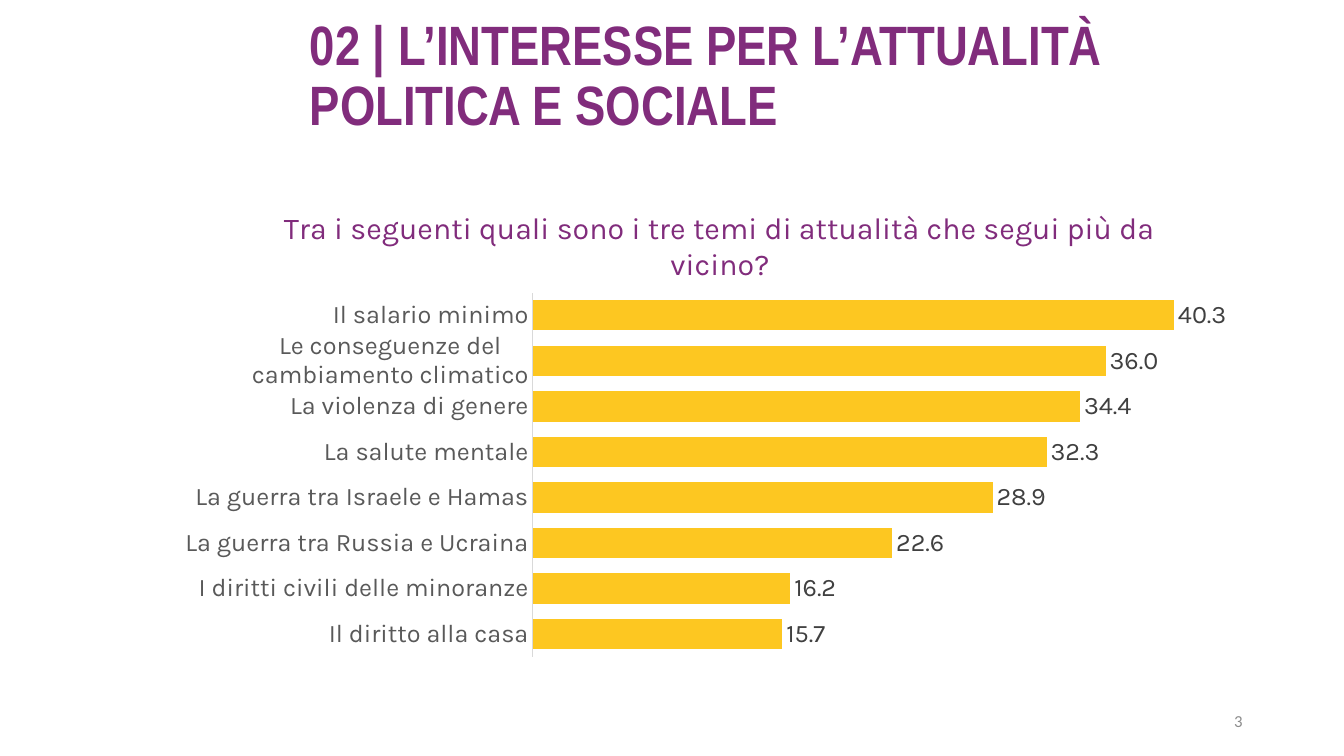
from lxml.etree import SubElement
from pptx import Presentation
from pptx.chart.data import CategoryChartData
from pptx.dml.color import RGBColor
from pptx.enum.chart import XL_CHART_TYPE, XL_LABEL_POSITION, XL_TICK_MARK
from pptx.enum.text import MSO_ANCHOR, MSO_AUTO_SIZE, PP_ALIGN
from pptx.oxml.ns import qn
from pptx.util import Inches, Pt

WIDTH, HEIGHT = Inches(13.33), Inches(7.5)
PURPLE = RGBColor(0x81, 0x2C, 0x7C)
YELLOW = RGBColor(0xFD, 0xC7, 0x21)
LABEL_GREY = RGBColor(0x40, 0x40, 0x40)
AXIS_GREY = RGBColor(0x59, 0x59, 0x59)
LINE_GREY = RGBColor(0xD9, 0xD9, 0xD9)
NUMBER_GREY = RGBColor(0x8C, 0x8C, 0x8C)
BLACK = RGBColor(0, 0, 0)

QUESTION = "Tra i seguenti quali sono i tre temi di attualità che segui più da vicino?"
TOPICS = {
    "Il diritto alla casa": 15.7,
    "I diritti civili delle minoranze": 16.2,
    "La guerra tra Russia e Ucraina": 22.6,
    "La guerra tra Israele e Hamas": 28.9,
    "La salute mentale": 32.3,
    "La violenza di genere": 34.4,
    "Le conseguenze del cambiamento climatico": 36.0,
    "Il salario minimo": 40.3,
}


def format_font(font, color, **values):
    font.color.rgb = color
    for name, value in values.items():
        setattr(font, name, value)


def area(left, top, width, height):
    """Turn shares of the slide into lengths."""
    return (int(WIDTH * left), int(HEIGHT * top),
            int(WIDTH * width), int(HEIGHT * height))


def write_text(box, text, alignment, color, **values):
    frame = box.text_frame
    frame.word_wrap = True
    frame.auto_size = MSO_AUTO_SIZE.NONE
    frame.vertical_anchor = MSO_ANCHOR.MIDDLE
    para = frame.paragraphs[0]
    para.alignment = alignment
    span = para.add_run()
    span.text = text
    format_font(span.font, color, **values)
    return para


def place(parent, **shares):
    """Set a manual layout, in shares of the chart, on a chart part."""
    for old in parent.findall(qn("c:layout")):
        parent.remove(old)
    layout = SubElement(parent, qn("c:layout"))
    manual = SubElement(layout, qn("c:manualLayout"))
    if "w" in shares:
        SubElement(manual, qn("c:layoutTarget"), val="inner")
    for axis in "xy":
        SubElement(manual, qn(f"c:{axis}Mode"), val="edge")
    for name, share in shares.items():
        SubElement(manual, qn(f"c:{name}"), val=str(share))
    return layout


def add_title(page):
    title = page.shapes.title
    title.left, title.top, title.width, title.height = area(0.223, 0.041, 0.723, 0.124)
    para = write_text(title, "02 | L’INTERESSE PER L’ATTUALITÀ POLITICA E SOCIALE",
                      PP_ALIGN.LEFT, PURPLE,
                      size=Pt(39.6), name="Arial Narrow", bold=True)
    para.line_spacing = 0.9


def add_topics_chart(page):
    data = CategoryChartData(number_format="0.0")
    data.categories = list(TOPICS)
    data.add_series("Series 1", list(TOPICS.values()))
    chart = page.shapes.add_chart(XL_CHART_TYPE.BAR_CLUSTERED,
                                  *area(0.116, 0.235, 0.829, 0.647), data).chart
    chart.has_legend = False
    format_font(chart.font, BLACK, size=Pt(18), name="Karla")

    # Question above the bars
    chart.has_title = True
    span = chart.chart_title.text_frame.paragraphs[0].add_run()
    span.text = QUESTION
    format_font(span.font, PURPLE, size=Pt(21.6), name="Karla", bold=False)
    chart.chart_title.include_in_layout = False
    heading = chart._chartSpace.chart.find(qn("c:title"))
    heading.find(qn("c:tx")).addnext(place(heading, x=0.11, y=0.05))

    # Axes
    topics = chart.category_axis
    topics.major_tick_mark = topics.minor_tick_mark = XL_TICK_MARK.NONE
    topics.format.line.color.rgb = LINE_GREY
    topics.format.line.width = Pt(0.75)
    format_font(topics.tick_labels.font, AXIS_GREY, size=Pt(18), name="Karla")
    scale = chart.value_axis
    scale.visible = False
    scale.has_major_gridlines = False
    scale.minimum_scale, scale.maximum_scale = 0, 45

    # Bars and their values
    plot = chart.plots[0]
    plot.gap_width = 50
    plot.vary_by_categories = False
    fill = plot.series[0].format.fill
    fill.solid()
    fill.fore_color.rgb = YELLOW
    labels = plot.series[0].data_labels
    labels.show_value = True
    labels.number_format, labels.number_format_is_linked = "0.0", False
    labels.position = XL_LABEL_POSITION.OUTSIDE_END
    format_font(labels.font, LABEL_GREY, size=Pt(18), name="Karla")
    plot_area = chart._chartSpace.chart.plotArea
    plot_area.insert(0, place(plot_area, x=0.338, y=0.235, w=0.643, h=0.745))


def add_page_number(page):
    box = page.shapes.add_textbox(*area(0.707, 0.927, 0.225, 0.053))
    write_text(box, "3", PP_ALIGN.RIGHT, NUMBER_GREY, size=Pt(12), name="Calibri")


def main():
    deck = Presentation()
    deck.slide_width, deck.slide_height = WIDTH, HEIGHT
    page = deck.slides.add_slide(deck.slide_layouts[5])
    add_title(page)
    add_page_number(page)
    add_topics_chart(page)
    deck.save("out.pptx")


if __name__ == "__main__":
    main()
